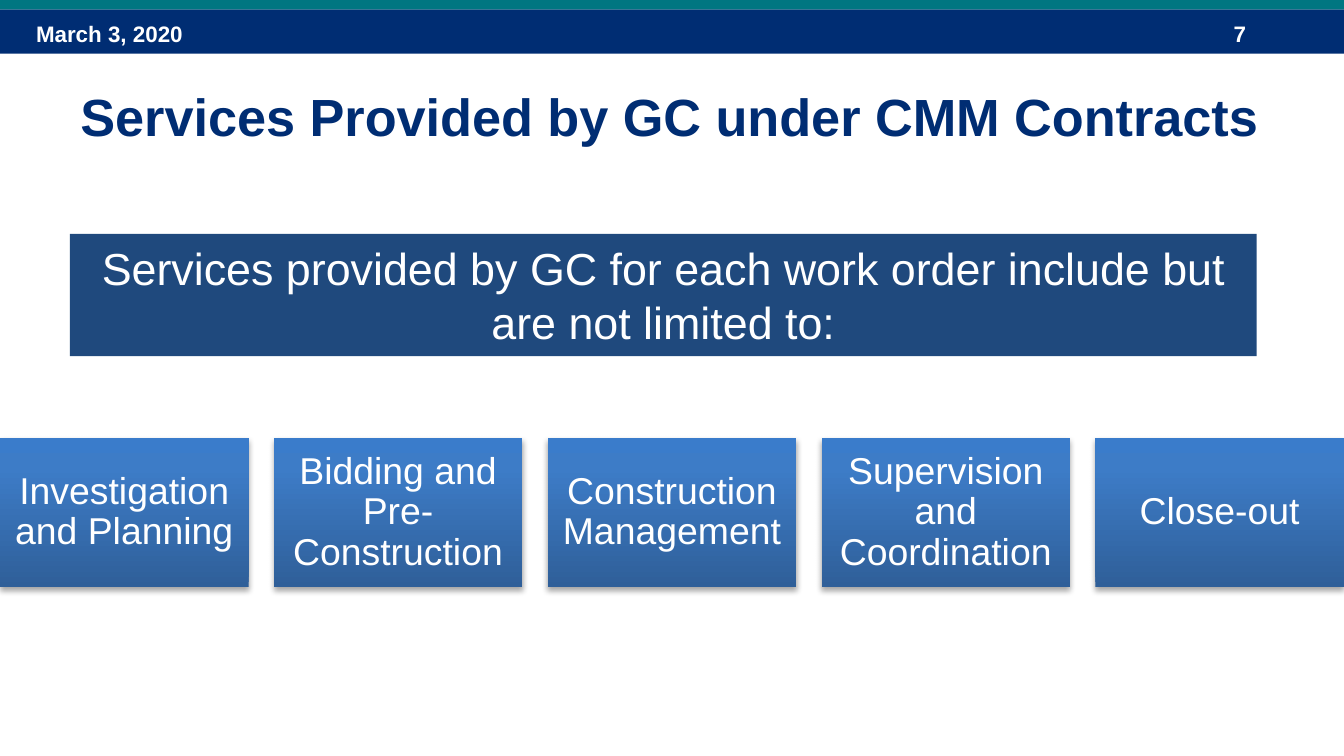
from lxml import etree
from pptx import Presentation
from pptx.dml.color import RGBColor
from pptx.enum.shapes import MSO_SHAPE
from pptx.enum.text import MSO_ANCHOR, PP_ALIGN
from pptx.oxml.ns import qn
from pptx.util import Inches, Pt

RECTANGLE = MSO_SHAPE.RECTANGLE
LEFT, CENTER = PP_ALIGN.LEFT, PP_ALIGN.CENTER
TOP, MIDDLE = MSO_ANCHOR.TOP, MSO_ANCHOR.MIDDLE

FONT = "Arial"
COLORS = {
    "navy": "002D73",
    "teal": "007681",
    "banner": "1F497D",
    "white": "FFFFFF",
    "shadow": "000000",
    "card_bottom": "2F5F99",
    "card_middle": "3D7CC7",
    "card_top": "3A7CCB",
}
CARD_STOPS = [(0, "card_bottom"), (80, "card_middle"), (100, "card_top")]

SLIDE_WIDTH = 10
SLIDE_HEIGHT = SLIDE_WIDTH * 9 / 16
CARD_TOP, CARD_WIDTH, CARD_HEIGHT = 3.26, 1.85, 1.11
SERVICES = [
    "Investigation and Planning",
    "Bidding and Pre-Construction",
    "Construction Management",
    "Supervision and Coordination",
    "Close-out",
]


def write_text(shape, text, size=12, color="white", bold=False, align=LEFT,
               anchor=TOP, inset=None, line_spacing=None):
    frame = shape.text_frame
    frame.word_wrap = True
    frame.vertical_anchor = anchor
    if inset is not None:
        frame.margin_left = frame.margin_right = Inches(inset)
        frame.margin_top = frame.margin_bottom = Inches(inset)
    para = frame.paragraphs[0]
    para.alignment = align
    para.line_spacing = line_spacing
    span = para.add_run()
    span.text = text
    span.font.name = FONT
    span.font.size = Pt(size)
    span.font.bold = bold
    span.font.color.rgb = RGBColor.from_string(COLORS[color])


def add_text(page, left, top, width, height, text, **text_format):
    box = page.shapes.add_textbox(Inches(left), Inches(top), Inches(width), Inches(height))
    write_text(box, text, **text_format)


def add_rectangle(page, left, top, width, height, color):
    shape = page.shapes.add_shape(
        RECTANGLE, Inches(left), Inches(top), Inches(width), Inches(height))
    shape.shadow.inherit = False
    shape.fill.solid()
    shape.fill.fore_color.rgb = RGBColor.from_string(COLORS[color])
    shape.line.fill.background()
    return shape


def add_color(parent, color):
    return etree.SubElement(parent, qn("a:srgbClr"), val=COLORS[color])


def set_card_gradient(shape):
    """Fill with three stops, running from the bottom edge to the top."""
    gradient = etree.Element(qn("a:gradFill"), rotWithShape="1")
    stops = etree.SubElement(gradient, qn("a:gsLst"))
    for percent, color in CARD_STOPS:
        add_color(etree.SubElement(stops, qn("a:gs"), pos=str(percent * 1000)), color)
    etree.SubElement(gradient, qn("a:lin"), ang=str(270 * 60000), scaled="0")
    properties = shape.element.spPr
    properties.replace(properties.find(qn("a:solidFill")), gradient)


def set_card_shadow(shape):
    effects = shape.element.spPr.find(qn("a:effectLst"))
    shadow = etree.SubElement(
        effects, qn("a:outerShdw"), blurRad=str(Pt(3.1)), dist=str(Pt(1.8)),
        dir=str(90 * 60000), rotWithShape="0")
    etree.SubElement(add_color(shadow, "shadow"), qn("a:alpha"), val="35000")


def add_card(page, left, text):
    card = add_rectangle(page, left, CARD_TOP, CARD_WIDTH, CARD_HEIGHT, "card_middle")
    set_card_gradient(card)
    set_card_shadow(card)
    write_text(card, text, size=20, align=CENTER, anchor=MIDDLE, inset=0.08,
               line_spacing=0.9)


def main():
    deck = Presentation()
    deck.slide_width = Inches(SLIDE_WIDTH)
    deck.slide_height = Inches(SLIDE_HEIGHT)
    page = deck.slides.add_slide(deck.slide_layouts[6])

    # Header bars with date and page number
    add_rectangle(page, 0, 0.07, SLIDE_WIDTH, 0.33, "navy")
    add_text(page, 0.17, 0.1, 2.33, 0.3, "March 3, 2020", bold=True)
    add_text(page, 9.08, 0.1, 0.75, 0.3, "7", bold=True)
    add_rectangle(page, 0, -0.02, SLIDE_WIDTH, 0.09, "teal")

    # Title
    add_text(page, 0.5, 0.4, 9, 0.92, "Services Provided by GC under CMM Contracts",
             size=28, color="navy", bold=True, anchor=MIDDLE)

    # Row of service cards, spread over the full width
    pitch = (SLIDE_WIDTH - CARD_WIDTH) / (len(SERVICES) - 1)
    for index, service in enumerate(SERVICES):
        add_card(page, index * pitch, service)

    # Introductory banner
    banner = add_rectangle(page, 0.52, 1.74, 8.83, 0.91, "banner")
    write_text(banner, "Services provided by GC for each work order include but "
               "are not limited to:", size=24, align=CENTER)

    deck.save("out.pptx")


if __name__ == "__main__":
    main()
